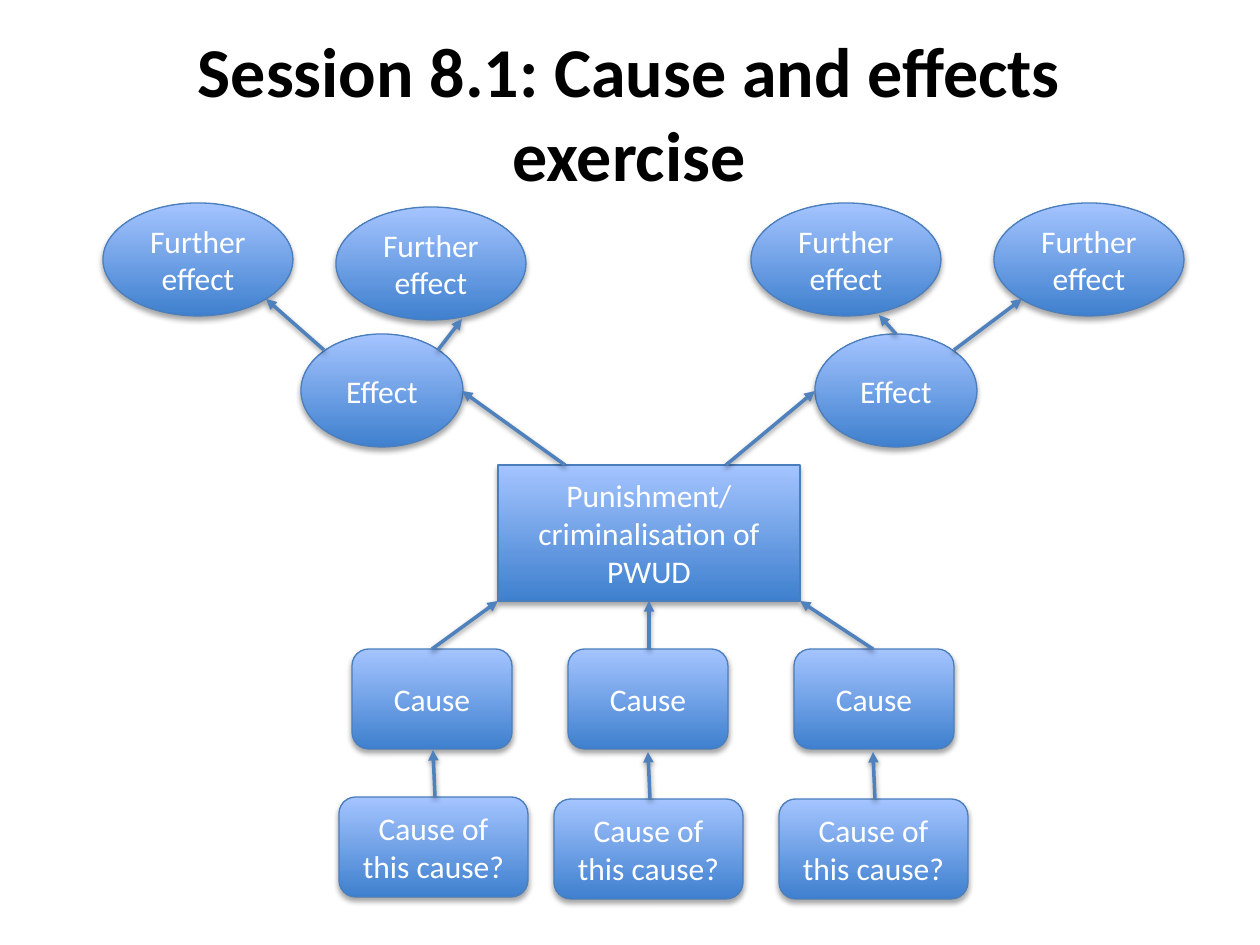
"""Build a cause and effects diagram slide."""
from lxml import etree
from pptx import Presentation
from pptx.dml.color import RGBColor
from pptx.enum.shapes import MSO_CONNECTOR, MSO_SHAPE
from pptx.enum.text import MSO_ANCHOR, PP_ALIGN
from pptx.oxml.ns import qn
from pptx.util import Emu, Pt

PX_PER_INCH = 126
EMU_PER_INCH = 914400
FONT = "Calibri"
RECTANGLE = MSO_SHAPE.RECTANGLE
ROUNDED = MSO_SHAPE.ROUNDED_RECTANGLE
OVAL = MSO_SHAPE.OVAL
STRAIGHT = MSO_CONNECTOR.STRAIGHT
CENTER = PP_ALIGN.CENTER
MIDDLE = MSO_ANCHOR.MIDDLE
COLORS = {
    "title": "000000",
    "label": "FFFFFF",
    "bottom": "3F80CE",
    "top": "A4C4FF",
    "outline": "4B7EBC",
    "arrow": "4F81BD",
    "shadow": "000000",
}


def px(length):
    """Turn pixels into EMU."""
    return Emu(round(length * EMU_PER_INCH / PX_PER_INCH))


def color(name):
    """Return a named colour."""
    return RGBColor.from_string(COLORS[name])


def write_text(shape, text, *, size, tint, bold=False):
    """Write centred paragraphs, one for each line of text."""
    frame = shape.text_frame
    frame.word_wrap = True
    frame.vertical_anchor = MIDDLE
    for index, line in enumerate(text.split("\n")):
        para = frame.add_paragraph() if index else frame.paragraphs[0]
        para.alignment = CENTER
        span = para.add_run()
        span.text = line
        span.font.name = FONT
        span.font.size = Pt(size)
        span.font.bold = bold
        span.font.color.rgb = color(tint)


def add_shadow(shape, *, opacity, distance):
    """Give a shape a soft shadow that falls straight down."""
    effects = etree.SubElement(shape._element.spPr, qn("a:effectLst"))
    shadow = etree.SubElement(
        effects, qn("a:outerShdw"), blurRad=str(Pt(3.1)), dist=str(Pt(distance)),
        dir="5400000", rotWithShape="0")
    shade = etree.SubElement(shadow, qn("a:srgbClr"), val=COLORS["shadow"])
    etree.SubElement(shade, qn("a:alpha"), val=str(opacity * 1000))


def add_node(page, kind, text, left, top, width, height):
    """Add a labelled gradient shape."""
    node = page.shapes.add_shape(kind, px(left), px(top), px(width), px(height))
    node.fill.gradient()
    node.fill.gradient_angle = 90
    for stop, name, position in zip(node.fill.gradient_stops, ("bottom", "top"), (0, 1)):
        stop.color.rgb = color(name)
        stop.position = position
    node.line.color.rgb = color("outline")
    node.line.width = Pt(0.75)
    add_shadow(node, opacity=35, distance=1.8)
    write_text(node, text, size=18, tint="label")


def add_arrow(page, start, end):
    """Add an arrow that points at its end."""
    arrow = page.shapes.add_connector(STRAIGHT, *map(px, start + end))
    arrow.line.color.rgb = color("arrow")
    arrow.line.width = Pt(2)
    etree.SubElement(arrow.line._get_or_add_ln(), qn("a:tailEnd"), type="triangle")
    add_shadow(arrow, opacity=38, distance=1.6)


def add_title(page, text):
    """Place and fill the title placeholder."""
    title = page.shapes.title
    title.left, title.top, title.width, title.height = map(px, (62, 0, 1134, 223))
    write_text(title, text, size=40, tint="title", bold=True)


def add_effects(page):
    """Add the upper half with effects and further effects."""
    for left in (301, 815):
        add_node(page, OVAL, "Effect", left, 334, 162, 113)
    for left, top in ((103, 203), (336, 207), (751, 203), (994, 203)):
        add_node(page, OVAL, "Further effect", left, top, 190, 113)
    for start, end in (
        ((565, 465), (462, 391)),
        ((726, 465), (815, 391)),
        ((324, 350), (266, 299)),
        ((438, 350), (462, 319)),
        ((896, 334), (879, 315)),
        ((954, 350), (1022, 299)),
    ):
        add_arrow(page, start, end)


def add_causes(page):
    """Add the lower half with causes and their own causes."""
    columns = (
        (352, 339, 797, (432, 649), (498, 601)),
        (568, 554, 799, (649, 649), (649, 601)),
        (794, 779, 799, (873, 649), (800, 601)),
    )
    for cause_left, root_left, root_top, start, end in columns:
        add_node(page, ROUNDED, "Cause", cause_left, 649, 160, 100)
        add_node(page, ROUNDED, "Cause of this cause?", root_left, root_top, 189, 100)
        add_arrow(page, start, end)
        root_middle = root_left + 95
        add_arrow(page, (root_middle + 1, root_top), (root_middle - 1, root_top - 47))


def main():
    """Build and save the deck."""
    deck = Presentation()
    deck.slide_width, deck.slide_height = px(1260), px(945)
    page = deck.slides.add_slide(deck.slide_layouts[5])
    add_title(page, "Session 8.1: Cause and effects exercise")
    add_node(page, RECTANGLE, "Punishment/\ncriminalisation of PWUD", 498, 465, 302, 136)
    add_effects(page)
    add_causes(page)
    deck.save("out.pptx")


if __name__ == "__main__":
    main()
